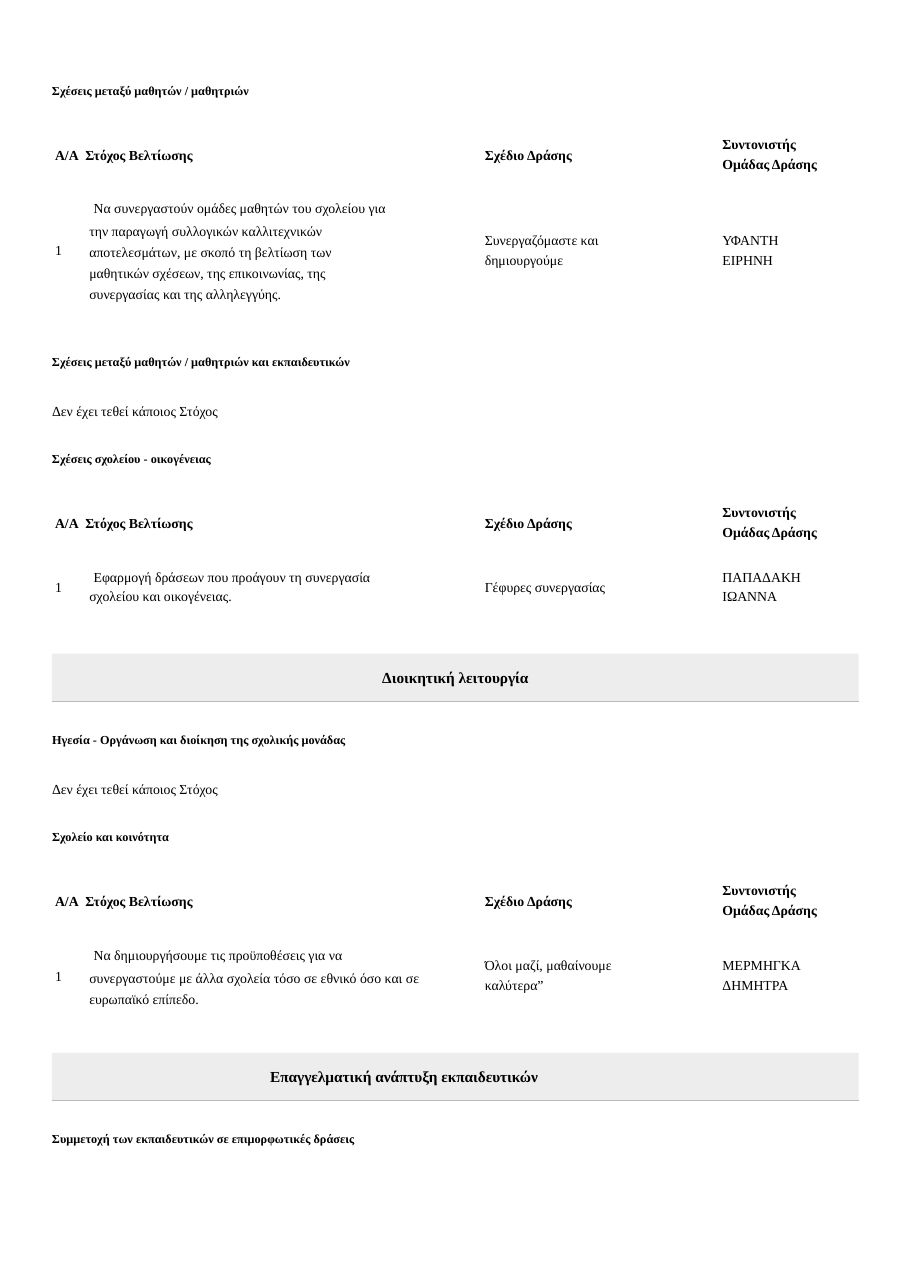
"""Build a page of school improvement goals with action plans and coordinators."""
from lxml.etree import SubElement
from pptx import Presentation
from pptx.dml.color import RGBColor as Rgb
from pptx.enum.shapes import MSO_CONNECTOR as Link, MSO_SHAPE as Form
from pptx.enum.text import MSO_ANCHOR as Anchor, PP_ALIGN as Align
from pptx.oxml.ns import qn
from pptx.util import Cm, Pt

NOTE = "Δεν έχει τεθεί κάποιος Στόχος"
HEADS = [
    (2.13, "Σχέσεις μεταξύ μαθητών / μαθητριών"),
    (8.38, "Σχέσεις μεταξύ μαθητών / μαθητριών και εκπαιδευτικών"),
    (10.62, "Σχέσεις σχολείου - οικογένειας"),
    (17.09, "Ηγεσία - Οργάνωση και διοίκηση της σχολικής μονάδας"),
    (19.33, "Σχολείο και κοινότητα"),
    (26.29, "Συμμετοχή των εκπαιδευτικών σε επιμορφωτικές δράσεις"),
]
NOTES = [9.49, 18.22]
BANDS = [
    (15.07, "Διοικητική λειτουργία", Align.CENTER, 0),
    (24.27, "Επαγγελματική ανάπτυξη εκπαιδευτικών", Align.LEFT, 5.03),
]
TITLES = [
    ["A/A\tΣτόχος Βελτίωσης"],
    ["Σχέδιο Δράσης"],
    ["Συντονιστής", "Ομάδας Δράσης"],
]
GOALS = [
    dict(top=3.59, mid=5.8, lines=5, style="wide", right=2.2,
         goal=["Να συνεργαστούν ομάδες μαθητών του σχολείου για",
               "την παραγωγή συλλογικών καλλιτεχνικών αποτελεσμάτων, με σκοπό τη "
               "βελτίωση των μαθητικών σχέσεων, της επικοινωνίας, της συνεργασίας "
               "και της αλληλεγγύης."],
         plan=["Συνεργαζόμαστε και", "δημιουργούμε"],
         lead=["ΥΦΑΝΤΗ", "ΕΙΡΗΝΗ"]),
    dict(top=12.08, mid=13.56, lines=2, style="next", right=0,
         goal=["Εφαρμογή δράσεων που προάγουν τη συνεργασία",
               "σχολείου και οικογένειας."],
         plan=["Γέφυρες συνεργασίας"],
         lead=["ΠΑΠΑΔΑΚΗ", "ΙΩΑΝΝΑ"]),
    dict(top=20.79, mid=22.52, lines=3, style="loose", right=0,
         goal=["Να δημιουργήσουμε τις προϋποθέσεις για να",
               "συνεργαστούμε με άλλα σχολεία τόσο σε εθνικό όσο και σε "
               "ευρωπαϊκό επίπεδο."],
         plan=["Όλοι μαζί, μαθαίνουμε", "καλύτερα”"],
         lead=["ΜΕΡΜΗΓΚΑ", "ΔΗΜΗΤΡΑ"]),
]

FACE = dict(name="Times New Roman")
THEME = dict(
    ink=Rgb(0, 0, 0), fill=Rgb(0xED, 0xED, 0xED), rule=Rgb(0xBA, 0xBA, 0xBA),
    head=dict(FACE, size=Pt(8), bold=True),
    title=dict(FACE, size=Pt(9), bold=True),
    body=dict(FACE, size=Pt(9), bold=False),
    band=dict(FACE, size=Pt(10), bold=True),
)
FIRST = dict(head=Pt(9.1), title=Pt(10.2), body=Pt(10.1))
STYLES = dict(
    next=dict(line_spacing=0.96, space_before=Pt(2.9)),
    wide=dict(line_spacing=Pt(13.8), space_before=Pt(1)),
    loose=dict(line_spacing=1.25, space_before=Pt(2.1)),
)
LEFT, WIDE, TALL = 1.2, 18.6, 1.1
COLS = dict(num=(1.27, 0.4), goal=(2.06, 8.6), plan=(11.18, 3.8), lead=(16.66, 3))
TITLE_COLS = [(1.27, 4.2), COLS["plan"], COLS["lead"]]
TAB, SHIFT = 0.7, 0.1
LINE, STEP = 0.38, 0.49
CHAR = 0.185


def apply(item, values):
    for key, value in values.items():
        setattr(item, key, value)


def paint(para, kind):
    apply(para.font, THEME[kind])
    para.font.color.rgb = THEME["ink"]


def clear(frame, **more):
    apply(frame, dict(word_wrap=True, margin_left=0, margin_right=0,
                      margin_top=0, margin_bottom=0, **more))


def write(slide, col, mid, texts, kind, lines=None, style="next", shift=0, right=0):
    left, wide = col
    tall = LINE + STEP * ((lines or len(texts)) - 1)
    box = slide.shapes.add_textbox(Cm(left), Cm(mid - tall / 2), Cm(wide), Cm(tall))
    frame = box.text_frame
    clear(frame, vertical_anchor=Anchor.TOP)
    for i, text in enumerate(texts):
        para = frame.add_paragraph() if i else frame.paragraphs[0]
        para.text = text
        props = para._p.get_or_add_pPr()
        if "\t" in text:
            tabs = SubElement(props, qn("a:tabLst"))
            SubElement(tabs, qn("a:tab"), pos=str(Cm(TAB)), algn="l")
        if i:
            props.set("marR", str(Cm(right)))
            apply(para, STYLES[style])
        else:
            props.set("marL", str(Cm(shift)))
            para.line_spacing = FIRST[kind]
        paint(para, kind)


def add_band(slide, top, text, align, inset):
    band = slide.shapes.add_shape(
        Form.RECTANGLE, Cm(LEFT), Cm(top), Cm(WIDE), Cm(TALL))
    band.shadow.inherit = False
    band.fill.solid()
    band.fill.fore_color.rgb = THEME["fill"]
    band.line.fill.background()
    frame = band.text_frame
    clear(frame, vertical_anchor=Anchor.MIDDLE)
    frame.margin_left = Cm(inset)
    para = frame.paragraphs[0]
    apply(para, dict(text=text, alignment=align))
    paint(para, "band")
    low = Cm(top + TALL)
    rule = slide.shapes.add_connector(
        Link.STRAIGHT, Cm(LEFT), low, Cm(LEFT + WIDE), low)
    rule.line.color.rgb = THEME["rule"]
    rule.line.width = Pt(0.85)
    SubElement(rule._element.spPr, qn("a:effectLst"))


def add_goal(slide, item):
    for col, texts in zip(TITLE_COLS, TITLES):
        write(slide, col, item["top"], texts, "title")
    mid = item["mid"]
    write(slide, COLS["num"], mid, ["1"], "body")
    write(slide, COLS["goal"], mid, item["goal"], "body", item["lines"],
          item["style"], SHIFT, item["right"])
    for key in ("plan", "lead"):
        write(slide, COLS[key], mid, item[key], "body")


def main():
    deck = Presentation()
    apply(deck, dict(slide_width=Cm(21.03), slide_height=Cm(29.69)))
    slide = deck.slides.add_slide(deck.slide_layouts[6])
    for band in BANDS:
        add_band(slide, *band)
    for mid, text in HEADS:
        write(slide, (LEFT, CHAR * len(text)), mid, [text], "head")
    for mid in NOTES:
        write(slide, (LEFT, CHAR * len(NOTE)), mid, [NOTE], "body")
    for item in GOALS:
        add_goal(slide, item)
    deck.save("out.pptx")


if __name__ == "__main__":
    main()
